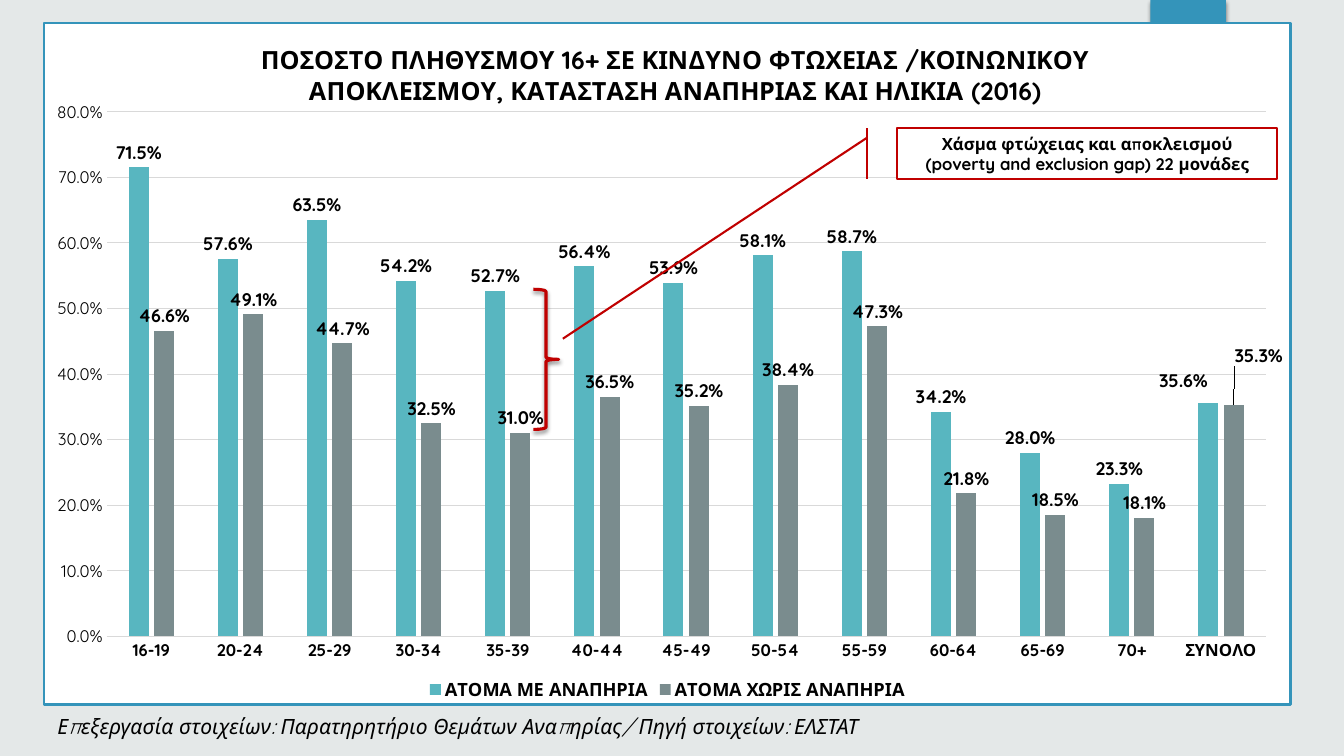
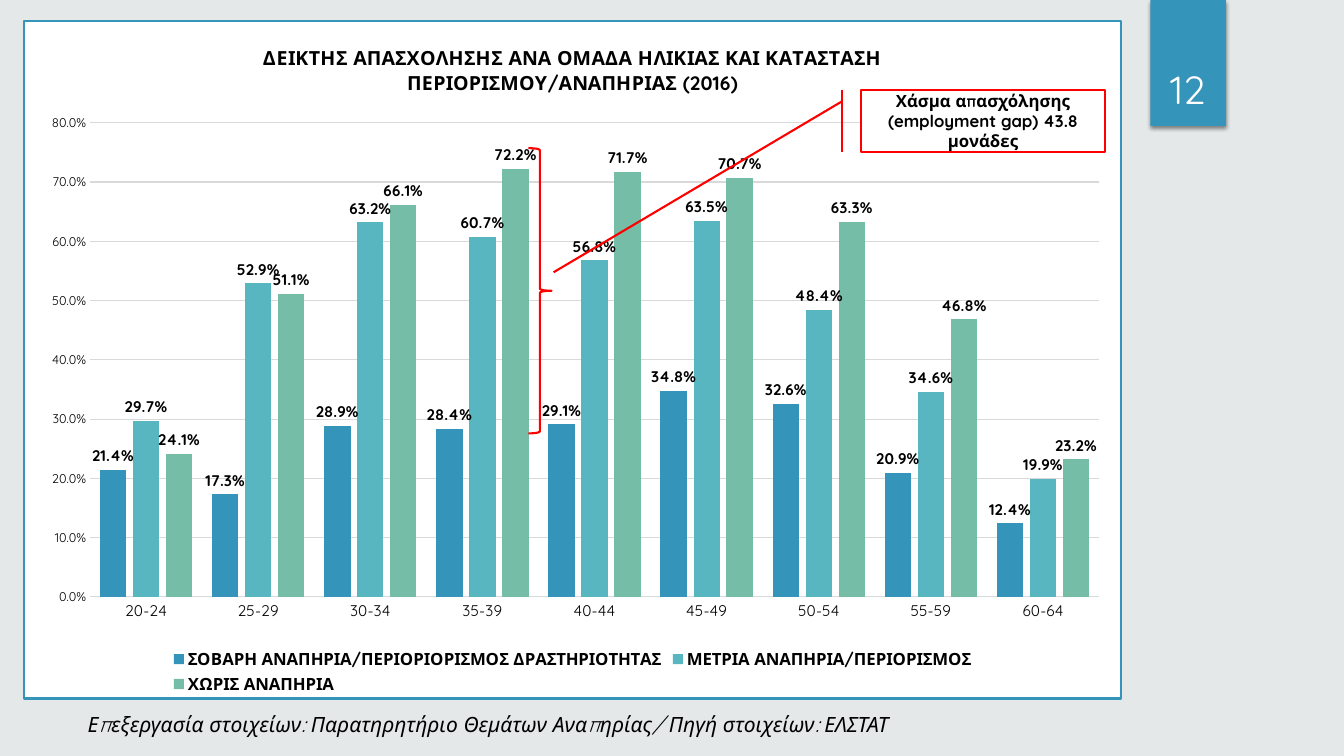
from dataclasses import dataclass

from pptx import Presentation
from pptx.chart.data import CategoryChartData
from pptx.dml.color import RGBColor
from pptx.enum.chart import XL_CHART_TYPE as ChartType
from pptx.enum.chart import XL_LABEL_POSITION as LabelPosition
from pptx.enum.chart import XL_LEGEND_POSITION as LegendPosition
from pptx.enum.chart import XL_TICK_MARK as TickMark
from pptx.enum.shapes import MSO_SHAPE as Preset
from pptx.enum.text import MSO_ANCHOR as Anchor
from pptx.enum.text import PP_ALIGN as Align
from pptx.oxml import parse_xml
from pptx.oxml.ns import nsdecls, qn
from pptx.util import Inches, Pt


@dataclass(frozen=True)
class Theme:
    font: str = "Quicksand"
    background: str = "E4E8E8"
    accent: str = "3494BA"
    teal: str = "58B6C0"
    gray: str = "7A8C8E"
    green: str = "75BDA7"
    dark_red: str = "C00000"
    red: str = "FF0000"
    grid: str = "D9D9D9"
    white: str = "FFFFFF"
    black: str = "000000"
    page_size: float = 28
    source_size: float = 15
    callout_size: float = 12
    chart_size: float = 10


# XML helpers for settings without a public method
def set_layout(parent, position, **values):
    """Give a chart part a manual layout, at its place among the children."""
    old_layout = parent.find(qn("c:layout"))
    if old_layout is not None:
        parent.remove(old_layout)
    items = "".join(f'<c:{key} val="{value}"/>' for key, value in values.items())
    parent.insert(position, parse_xml(
        f'<c:layout {nsdecls("c")}><c:manualLayout>{items}</c:manualLayout></c:layout>'))


def add_shadow(shape):
    shape.shadow.inherit = False
    effects = shape._element.spPr.find(qn("a:effectLst"))
    effects.append(parse_xml(
        f'<a:outerShdw {nsdecls("a")} blurRad="{Pt(3)}" dist="{Pt(2)}" dir="5400000" '
        'rotWithShape="0"><a:srgbClr val="000000"><a:alpha val="45000"/></a:srgbClr>'
        '</a:outerShdw>'))


class Deck:
    """Holds the style and the current slide."""

    def __init__(self, theme):
        self.theme = theme
        self.presentation = Presentation()
        self.presentation.slide_width = Inches(13.33)
        self.presentation.slide_height = Inches(7.5)
        fill = self.presentation.slide_master.background.fill
        fill.solid()
        fill.fore_color.rgb = RGBColor.from_string(theme.background)
        self.slide = None

    def style_font(self, font, size, color=None, **formats):
        formats = {"name": self.theme.font, "size": Pt(size), **formats}
        for key, value in formats.items():
            setattr(font, key, value)
        font.color.rgb = RGBColor.from_string(color or self.theme.black)

    def style_line(self, line, color, width):
        line.color.rgb = RGBColor.from_string(color)
        line.width = Pt(width)

    def set_text(self, shape, text, size, color=None, align=Align.LEFT,
                 anchor=Anchor.TOP, wrap=True, **formats):
        frame = shape.text_frame
        frame.word_wrap = wrap
        frame.vertical_anchor = anchor
        paragraph = frame.paragraphs[0]
        paragraph.text = text
        paragraph.alignment = align
        self.style_font(paragraph.font, size, color, **formats)

    def add_shape(self, preset, box, fill=None, line=None, width=1.5, shadow=False):
        shape = self.slide.shapes.add_shape(preset, *map(Inches, box))
        if fill:
            shape.fill.solid()
            shape.fill.fore_color.rgb = RGBColor.from_string(fill)
        else:
            shape.fill.background()
        if line:
            self.style_line(shape.line, line, width)
        else:
            shape.line.fill.background()
        if shadow:
            add_shadow(shape)
        else:
            shape.shadow.inherit = False
        return shape

    def add_text(self, box, text, size, **formats):
        shape = self.slide.shapes.add_textbox(*map(Inches, box))
        self.set_text(shape, text, size, **formats)

    def new_slide(self, page=None):
        layout = self.presentation.slide_layouts[6]
        self.slide = self.presentation.slides.add_slide(layout)
        self.add_shape(Preset.RECTANGLE, (11.41, 0, 0.75, 1.25),
                       fill=self.theme.accent, shadow=True)
        if page:
            self.add_text((11.32, 0.32, 0.92, 0.84), page, self.theme.page_size,
                          color=self.theme.white, align=Align.CENTER,
                          anchor=Anchor.BOTTOM)

    def add_source(self, left, top, text):
        self.add_text((left, top, 8.89, 0.35), text, self.theme.source_size,
                      wrap=False, italic=True)

    def add_callout(self, box, text, color, adjustments):
        shape = self.add_shape(Preset.LINE_CALLOUT_1_BORDER_AND_ACCENT_BAR, box,
                               fill=self.theme.white, line=color)
        for index, value in enumerate(adjustments):
            shape.adjustments[index] = value
        self.set_text(shape, text, self.theme.callout_size, align=Align.CENTER,
                      anchor=Anchor.MIDDLE, bold=True)

    def add_brace(self, box, color, width=1.5, shadow=False):
        self.add_shape(Preset.RIGHT_BRACE, box, line=color, width=width, shadow=shadow)

    def add_columns(self, box, title, categories, series, plot_box, sizes, gap,
                    overlap, number_format, bold_categories=False):
        theme = self.theme
        data = CategoryChartData(number_format=number_format)
        data.categories = categories
        for name, _, values in series:
            data.add_series(name, values)
        chart = self.slide.shapes.add_chart(
            ChartType.COLUMN_CLUSTERED, *map(Inches, box), data).chart
        self.style_font(chart.font, theme.chart_size)

        # Frame and plot area
        space = chart._chartSpace
        space.find(qn("c:txPr")).addprevious(parse_xml(
            f'<c:spPr {nsdecls("c", "a")}><a:solidFill><a:srgbClr val="{theme.white}"/>'
            f'</a:solidFill><a:ln w="{Pt(1.5)}"><a:solidFill>'
            f'<a:srgbClr val="{theme.accent}"/></a:solidFill></a:ln></c:spPr>'))
        set_layout(space.chart.plotArea, 0, layoutTarget="inner", xMode="edge",
                   yMode="edge", **dict(zip("xywh", plot_box)))

        # Title and legend
        chart.has_title = True
        paragraph = chart.chart_title.text_frame.paragraphs[0]
        paragraph.text = title
        self.style_font(paragraph.font, sizes["title"], bold=True)
        chart.has_legend = True
        chart.legend.position = LegendPosition.BOTTOM
        chart.legend.include_in_layout = False
        self.style_font(chart.legend.font, sizes["legend"], bold=True)

        # Axes
        category_axis, value_axis = chart.category_axis, chart.value_axis
        for axis in (category_axis, value_axis):
            axis.major_tick_mark = axis.minor_tick_mark = TickMark.NONE
        self.style_font(category_axis.tick_labels.font, sizes["categories"],
                        bold=bold_categories)
        self.style_line(category_axis.format.line, theme.grid, 0.75)
        self.style_font(value_axis.tick_labels.font, sizes["values"], bold=False)
        scale = {"minimum_scale": 0, "maximum_scale": 0.8, "major_unit": 0.1,
                 "has_major_gridlines": True}
        for key, value in scale.items():
            setattr(value_axis, key, value)
        value_axis.tick_labels.number_format = number_format
        value_axis.tick_labels.number_format_is_linked = False
        value_axis.format.line.fill.background()
        self.style_line(value_axis.major_gridlines.format.line, theme.grid, 0.75)

        # Columns and their labels
        plot = chart.plots[0]
        plot.vary_by_categories = False
        plot.gap_width = gap
        plot.overlap = overlap
        for column, (_, color, _) in zip(plot.series, series):
            column.format.fill.solid()
            column.format.fill.fore_color.rgb = RGBColor.from_string(color)
            column.invert_if_negative = False
            labels = column.data_labels
            formats = {"show_value": True, "number_format": number_format,
                       "number_format_is_linked": False,
                       "position": LabelPosition.OUTSIDE_END}
            for key, value in formats.items():
                setattr(labels, key, value)
            self.style_font(labels.font, sizes["labels"], bold=True)
        return chart

    def move_label(self, series, index, x, y, size, number_format):
        label = series.points[index].data_label
        label.position = LabelPosition.OUTSIDE_END
        self.style_font(label.font, size, bold=True)
        for element in series._element.iter(qn("c:dLbl")):
            set_layout(element, 1, x=x, y=y)
            element.insert(2, parse_xml(
                f'<c:numFmt {nsdecls("c")} formatCode="{number_format}" '
                'sourceLinked="0"/>'))


SOURCE = ("Επεξεργασία στοιχείων: Παρατηρητήριο Θεμάτων Αναπηρίας/ "
          "Πηγή στοιχείων: ΕΛΣΤΑΤ")
AGES = ["20-24", "25-29", "30-34", "35-39", "40-44", "45-49", "50-54", "55-59", "60-64"]


def build_poverty_slide(deck):
    theme = deck.theme
    number_format = "###0.0%"
    sizes = {"title": 18, "legend": 13, "categories": 12, "values": 12, "labels": 13}
    deck.new_slide()
    chart = deck.add_columns(
        (0.43, 0.22, 12.38, 6.78),
        "ΠΟΣΟΣΤΟ ΠΛΗΘΥΣΜΟΥ 16+ ΣΕ ΚΙΝΔΥΝΟ ΦΤΩΧΕΙΑΣ /ΚΟΙΝΩΝΙΚΟΥ ΑΠΟΚΛΕΙΣΜΟΥ, "
        "ΚΑΤΑΣΤΑΣΗ ΑΝΑΠΗΡΙΑΣ ΚΑΙ ΗΛΙΚΙΑ (2016)",
        ["16-19", *AGES, "65-69", "70+", "ΣΥΝΟΛΟ"],
        [("ΑΤΟΜΑ ΜΕ ΑΝΑΠΗΡΙΑ", theme.teal,
          [0.715, 0.576, 0.635, 0.542, 0.527, 0.564, 0.539, 0.581, 0.587, 0.342,
           0.28, 0.233, 0.356]),
         ("ΑΤΟΜΑ ΧΩΡΙΣ ΑΝΑΠΗΡΙΑ", theme.gray,
          [0.466, 0.491, 0.447, 0.325, 0.31, 0.365, 0.352, 0.384, 0.473, 0.218,
           0.185, 0.181, 0.353])],
        plot_box=(0.05, 0.13, 0.93, 0.77), sizes=sizes, gap=219, overlap=-27,
        number_format=number_format, bold_categories=True)
    set_layout(chart.chart_title._element, 1, xMode="edge", yMode="edge", x=0.17, y=0.02)
    # The labels of the total stand apart
    for series, (x, y) in zip(chart.plots[0].series, [(-0.02, -0.01), (0.02, -0.05)]):
        deck.move_label(series, 12, x, y, sizes["labels"], number_format)
    deck.add_brace((5.29, 2.87, 0.25, 1.39), theme.dark_red, width=2.25, shadow=True)
    deck.add_callout((8.9, 1.27, 3.77, 0.51),
                     "Χάσμα φτώχειας και αποκλεισμού (poverty and exclusion gap) 22 μονάδες",
                     theme.dark_red, (0.19, -0.08, 4.1, -0.88))
    deck.add_source(0.47, 7.03, SOURCE)


def build_employment_slide(deck):
    theme = deck.theme
    deck.new_slide("12")
    deck.add_columns(
        (0.23, 0.2, 10.9, 6.74),
        "ΔΕΙΚΤΗΣ ΑΠΑΣΧΟΛΗΣΗΣ ΑΝΑ ΟΜΑΔΑ ΗΛΙΚΙΑΣ ΚΑΙ ΚΑΤΑΣΤΑΣΗ "
        "ΠΕΡΙΟΡΙΣΜΟΥ/ΑΝΑΠΗΡΙΑΣ (2016)",
        AGES,
        [("ΣΟΒΑΡΗ ΑΝΑΠΗΡΙΑ/ΠΕΡΙΟΡΙΟΡΙΣΜΟΣ ΔΡΑΣΤΗΡΙΟΤΗΤΑΣ", theme.accent,
          [0.214, 0.173, 0.289, 0.284, 0.291, 0.348, 0.326, 0.209, 0.124]),
         ("ΜΕΤΡΙΑ ΑΝΑΠΗΡΙΑ/ΠΕΡΙΟΡΙΣΜΟΣ", theme.teal,
          [0.297, 0.529, 0.632, 0.607, 0.568, 0.635, 0.484, 0.346, 0.199]),
         ("ΧΩΡΙΣ ΑΝΑΠΗΡΙΑ", theme.green,
          [0.241, 0.511, 0.661, 0.722, 0.717, 0.707, 0.633, 0.468, 0.232])],
        plot_box=(0.06, 0.15, 0.92, 0.7),
        sizes={"title": 14, "legend": 12, "categories": 11, "values": 9, "labels": 11},
        gap=75, overlap=-25, number_format="0.0%")
    deck.add_callout((8.54, 0.89, 2.42, 0.62),
                     "Χάσμα απασχόλησης (employment gap) 43.8 μονάδες",
                     theme.red, (0.19, -0.08, 2.92, -1.26))
    deck.add_brace((5.24, 1.47, 0.23, 2.83), theme.red)
    deck.add_source(0.77, 7.01, SOURCE)


def main():
    deck = Deck(Theme())
    build_poverty_slide(deck)
    build_employment_slide(deck)
    deck.presentation.save("out.pptx")


if __name__ == "__main__":
    main()
